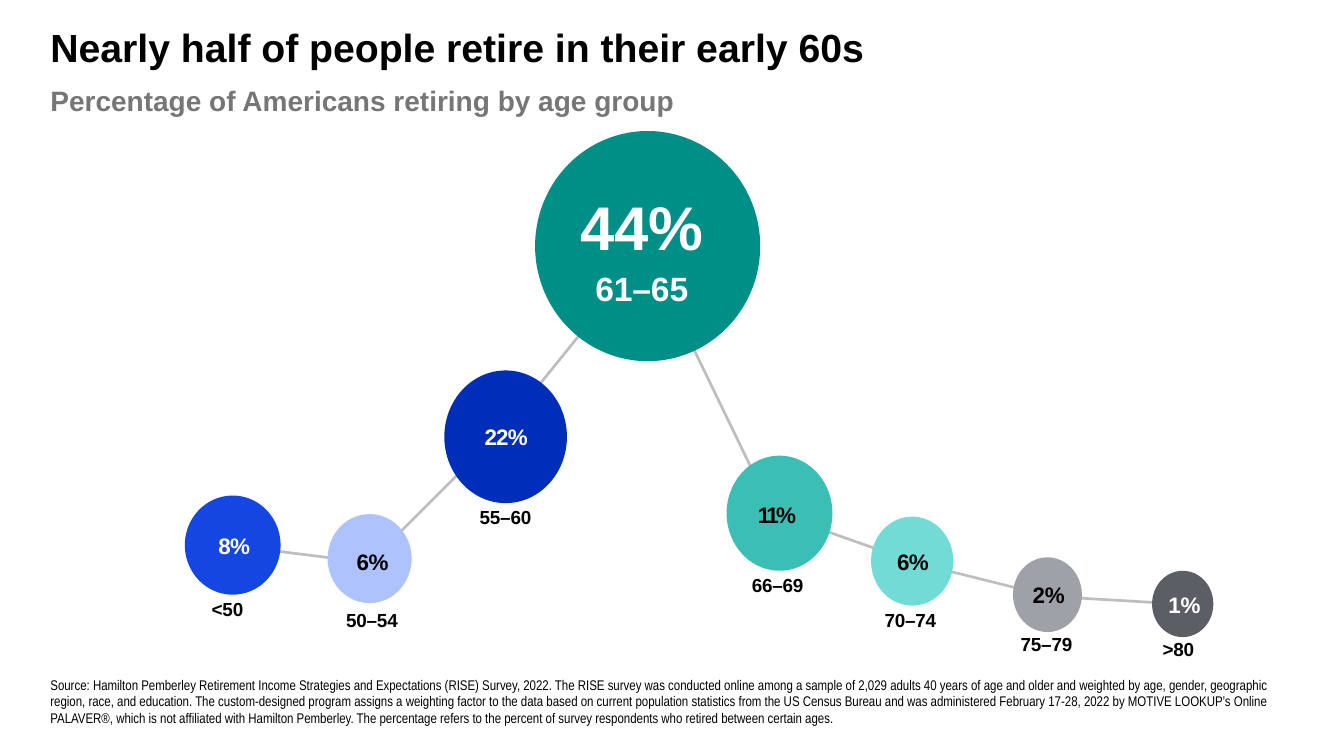
from collections import namedtuple

from pptx import Presentation
from pptx.dml.color import RGBColor
from pptx.enum.shapes import MSO_SHAPE
from pptx.enum.text import MSO_ANCHOR, PP_ALIGN
from pptx.util import Inches, Pt

ELLIPSE = MSO_SHAPE.OVAL
LEFT, CENTER = PP_ALIGN.LEFT, PP_ALIGN.CENTER
TOP, BOTTOM = MSO_ANCHOR.TOP, MSO_ANCHOR.BOTTOM

# The slide is a grid of 160 columns by 90 rows, each cell 1/12 inch square.
COLUMNS, ROWS = 160, 90
CELL = Inches(1) / 12
MARGIN = 6
TEXT_INSET = 0.3
PEAK_INSET = 2.1

COLORS = {
    "black": "000000", "white": "FFFFFF", "subtitle": "767676",
    "line": "BCBEC0", "blue": "1446E1", "pale blue": "ADC2FF",
    "navy": "002EB8", "teal": "008F86", "sea": "3BBEB4",
    "aqua": "72DBD5", "silver": "9EA1A8", "slate": "5C5E66",
}

Style = namedtuple("Style", "size color bold font spacing", defaults=(True, "Arial", 0))

# center column, center row, width, height, fill
BUBBLES = [
    (27.7, 64.9, 11.4, 11.8, "blue"),
    (44, 66.5, 10, 10.6, "pale blue"),
    (60.2, 52, 14.6, 15.8, "navy"),
    (77.1, 29.3, 26.8, 27.4, "teal"),
    (92.8, 61.1, 12.6, 13.7, "sea"),
    (108.6, 66.8, 9.8, 10.6, "aqua"),
    (124.7, 70.8, 8.2, 8.9, "silver"),
    (140.8, 71.9, 7.3, 7.9, "slate"),
]
LINE_POINTS = [
    (28.1, 64.8), (44.4, 66.6), (60.4, 51.2), (76.9, 29.5),
    (92.4, 61.3), (109, 67.1), (125.4, 71), (142.2, 71.9),
]
# text, left, top, width, alignment, color, letter spacing
VALUES = [
    ("8%", 26, 63.1, 4.7, LEFT, "white", -0.5),
    ("6%", 40.9, 65, 6.9, CENTER, "black", -0.2),
    ("22%", 57.7, 50.1, 6.9, LEFT, "white", -0.6),
    ("11%", 89.5, 59.4, 6, CENTER, "black", -1.9),
    ("6%", 106.8, 65, 4.5, LEFT, "black", -0.4),
    ("2%", 121.6, 68.9, 6.5, CENTER, "black", -0.2),
    ("1%", 139.1, 70.1, 4.5, LEFT, "white", -0.2),
]
# text, left, top
AGE_GROUPS = [
    ("<50", 25.2, 70.9), ("50–54", 41.2, 72.1), ("55–60", 57.1, 59.9),
    ("66–69", 89.5, 68), ("70–74", 105.3, 72.2), ("75–79", 121.5, 75),
    (">80", 138.4, 75.6),
]
SOURCE = (
    "Source: Hamilton Pemberley Retirement Income Strategies and Expectations "
    "(RISE) Survey, 2022. The RISE survey was conducted online among a sample of "
    "2,029 adults 40 years of age and older and weighted by age, gender, geographic "
    "region, race, and education. The custom-designed program assigns a weighting "
    "factor to the data based on current population statistics from the US Census "
    "Bureau and was administered February 17-28, 2022 by MOTIVE LOOKUP’s Online "
    "PALAVER®, which is not affiliated with Hamilton Pemberley. The percentage "
    "refers to the percent of survey respondents who retired between certain ages."
)


def cells(count):
    return round(count * CELL)


def rgb(name):
    return RGBColor.from_string(COLORS[name])


def add_text(slide, area, lines, align=LEFT, anchor=TOP, inset=0, gap=0):
    """Place (text, style) lines in a left, top, width, height area of cells."""
    box = slide.shapes.add_textbox(*map(cells, area))
    frame = box.text_frame
    frame.word_wrap = True
    frame.vertical_anchor = anchor
    frame.margin_left = frame.margin_right = frame.margin_bottom = 0
    frame.margin_top = cells(inset)
    for index, (text, style) in enumerate(lines):
        para = frame.add_paragraph() if index else frame.paragraphs[0]
        para.alignment = align
        if index:
            para.space_before = Pt(gap)
        span = para.add_run()
        span.text = text
        span.font.size = Pt(style.size)
        span.font.name = style.font
        span.font.bold = style.bold
        span.font.color.rgb = rgb(style.color)
        if style.spacing:
            span._r.get_or_add_rPr().set("spc", str(round(style.spacing * 100)))


def add_trend_line(slide):
    first, *rest = LINE_POINTS
    builder = slide.shapes.build_freeform(*first, scale=CELL)
    builder.add_line_segments(rest, close=False)
    line = builder.convert_to_shape()
    line.shadow.inherit = False
    line.fill.background()
    line.line.color.rgb = rgb("line")
    line.line.width = Pt(1.93)


def add_bubble(slide, column, row, width, height, fill):
    area = (column - width / 2, row - height / 2, width, height)
    bubble = slide.shapes.add_shape(ELLIPSE, *map(cells, area))
    bubble.shadow.inherit = False
    bubble.fill.solid()
    bubble.fill.fore_color.rgb = rgb(fill)
    bubble.line.fill.background()


def main():
    deck = Presentation()
    deck.slide_width, deck.slide_height = cells(COLUMNS), cells(ROWS)
    blank_layout = deck.slide_layouts[6]
    slide = deck.slides.add_slide(blank_layout)

    add_text(slide, (MARGIN, 2.8, 114, 10), [
        ("Nearly half of people retire in their early 60s", Style(28, "black")),
        ("Percentage of Americans retiring by age group", Style(20, "subtitle")),
    ], gap=9.5)

    add_trend_line(slide)
    for bubble in BUBBLES:
        add_bubble(slide, *bubble)

    add_text(slide, (65.8, 20.4, 21.2, 15.2), [
        ("44%", Style(44, "white", spacing=-0.2)),
        ("61–65", Style(24, "white", spacing=-0.1)),
    ], align=CENTER, inset=PEAK_INSET, gap=3.3)
    for text, left, top, width, align, color, spacing in VALUES:
        style = Style(16, color, spacing=spacing)
        add_text(slide, (left, top, width, 3.4), [(text, style)], align, inset=TEXT_INSET)
    for text, left, top in AGE_GROUPS:
        style = Style(13.5, "black", spacing=-0.1)
        add_text(slide, (left, top, 6.9, 2.9), [(text, style)], inset=TEXT_INSET)

    source_style = Style(10, "black", bold=False, font="Arial Narrow")
    add_text(slide, (MARGIN, 80.5, COLUMNS - 2 * MARGIN, 6),
             [(SOURCE, source_style)], anchor=BOTTOM)
    deck.save("out.pptx")


if __name__ == "__main__":
    main()
